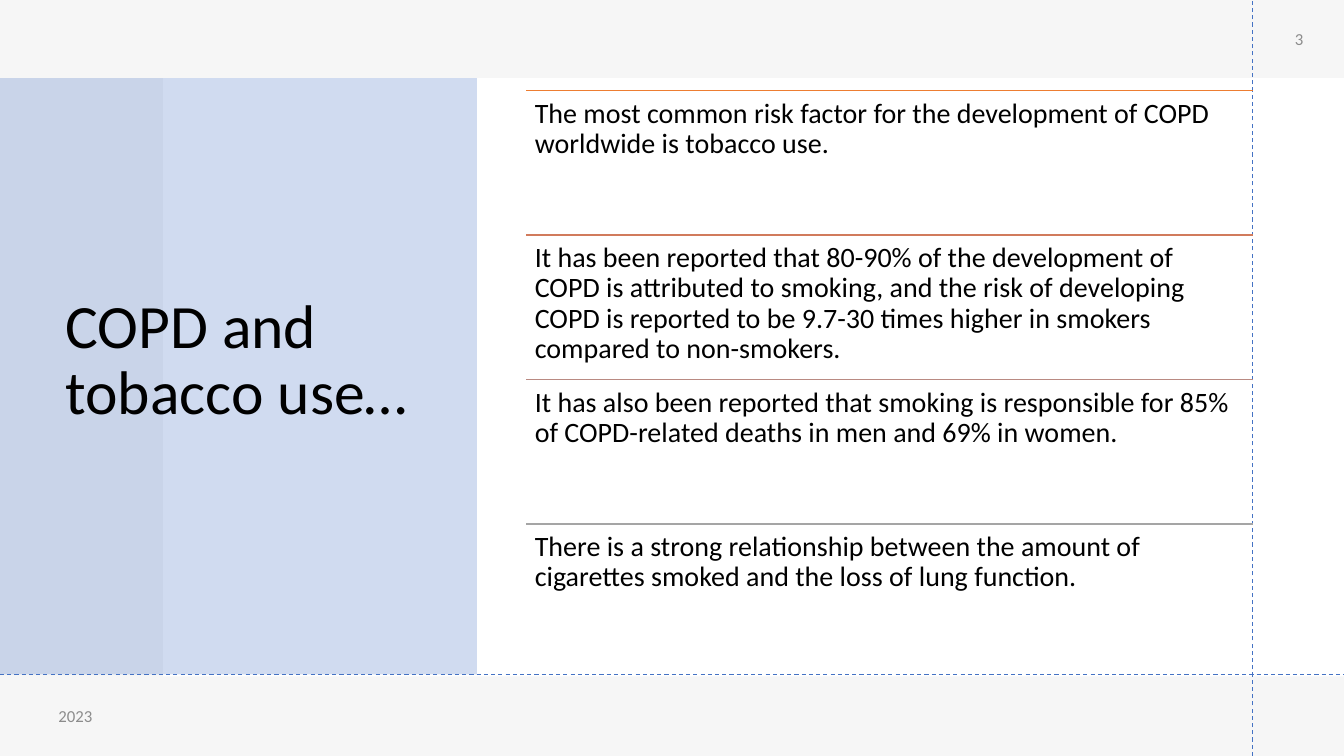
from dataclasses import dataclass

from lxml import etree
from pptx import Presentation
from pptx.dml.color import RGBColor
from pptx.enum.dml import MSO_LINE
from pptx.enum.shapes import MSO_CONNECTOR, MSO_SHAPE
from pptx.enum.text import MSO_ANCHOR, MSO_AUTO_SIZE, PP_ALIGN
from pptx.oxml.ns import qn
from pptx.util import Pt

RECTANGLE = MSO_SHAPE.RECTANGLE
STRAIGHT = MSO_CONNECTOR.STRAIGHT
DASH = MSO_LINE.DASH
LEFT, CENTER = PP_ALIGN.LEFT, PP_ALIGN.CENTER
TOP, MIDDLE = MSO_ANCHOR.TOP, MSO_ANCHOR.MIDDLE
NO_AUTOFIT = MSO_AUTO_SIZE.NONE
TITLE_ONLY = 5


@dataclass(frozen=True)
class Theme:
    font: str = "Calibri"
    white: str = "FFFFFF"
    grey: str = "E7E6E6"
    blue: str = "4472C4"
    text: str = "000000"
    muted: str = "8C8C8C"
    title_size: float = 44
    body_size: float = 20
    small_size: float = 12


THEME = Theme()

# Slide geometry in points
WIDTH, HEIGHT = 960, 540
GUIDE_X, GUIDE_Y = 895, 481.7
LIST_LEFT, LIST_TOP, ROW_HEIGHT = 376, 64.6, 103.2
LIST_WIDTH = GUIDE_X - LIST_LEFT

# Rule colour and wording of each row
FACTS = [
    ("ED7D31", "The most common risk factor for the development of COPD "
               "worldwide is tobacco use."),
    ("D17B5C", "It has been reported that 80-90% of the development of COPD "
               "is attributed to smoking, and the risk of developing COPD is "
               "reported to be 9.7-30 times higher in smokers compared to "
               "non-smokers."),
    ("B98A82", "It has also been reported that smoking is responsible for 85% "
               "of COPD-related deaths in men and 69% in women."),
    ("A5A5A5", "There is a strong relationship between the amount of "
               "cigarettes smoked and the loss of lung function."),
]


def write_text(shape, text, *, size, color=THEME.text, align=LEFT, anchor=TOP,
               spacing=1.0, after=0, margins=(7.2, 3.6)):
    """Put one formatted paragraph in a shape."""
    frame = shape.text_frame
    frame.word_wrap = True
    frame.auto_size = NO_AUTOFIT
    frame.vertical_anchor = anchor
    frame.margin_left = frame.margin_right = Pt(margins[0])
    frame.margin_top = frame.margin_bottom = Pt(margins[1])
    paragraph = frame.paragraphs[0]
    paragraph.alignment = align
    paragraph.line_spacing = spacing
    paragraph.space_after = Pt(after)
    run = paragraph.add_run()
    run.text = text
    run.font.name = THEME.font
    run.font.size = Pt(size)
    run.font.color.rgb = RGBColor.from_string(color)


def add_text(slide, box, text, **text_format):
    shape = slide.shapes.add_textbox(*map(Pt, box))
    write_text(shape, text, **text_format)


def add_panel(slide, box, color, opacity=100):
    """Add a borderless rectangle; opacity is a percentage."""
    shape = slide.shapes.add_shape(RECTANGLE, *map(Pt, box))
    shape.shadow.inherit = False
    shape.fill.solid()
    shape.fill.fore_color.rgb = RGBColor.from_string(color)
    shape.line.fill.background()
    if opacity < 100:
        color_element = shape.element.spPr.find(".//" + qn("a:srgbClr"))
        alpha = etree.SubElement(color_element, qn("a:alpha"))
        alpha.set("val", str(opacity * 1000))


def add_line(slide, start, end, color, width, dash=None):
    connector = slide.shapes.add_connector(STRAIGHT, *map(Pt, start + end))
    connector.line.color.rgb = RGBColor.from_string(color)
    connector.line.width = Pt(width)
    if dash is not None:
        connector.line.dash_style = dash
    etree.SubElement(connector.element.spPr, qn("a:effectLst"))


def add_title(slide, box, text):
    """Place the title placeholder above the panels drawn so far."""
    title = slide.shapes.title
    title.left, title.top, title.width, title.height = map(Pt, box)
    write_text(title, text, size=THEME.title_size, anchor=MIDDLE, spacing=0.9)
    title.element.getparent().append(title.element)


def add_fact(slide, top, color, text):
    """Add one row: a coloured rule with its text below."""
    add_line(slide, (LIST_LEFT, top), (GUIDE_X, top), color, 1)
    add_text(slide, (LIST_LEFT, top, LIST_WIDTH, ROW_HEIGHT), text,
             size=THEME.body_size, spacing=0.9, after=7, margins=(6, 6))


def main():
    presentation = Presentation()
    presentation.slide_width, presentation.slide_height = Pt(WIDTH), Pt(HEIGHT)
    slide = presentation.slides.add_slide(
        presentation.slide_layouts[TITLE_ONLY])

    # Background layers and title panel
    add_panel(slide, (0, 0, WIDTH, HEIGHT), THEME.white)
    add_panel(slide, (0, 0, WIDTH, HEIGHT), THEME.grey, opacity=35)
    add_panel(slide, (116.6, 55.8, WIDTH - 116.6, 427.4), THEME.white)
    add_panel(slide, (0, 55.8, 340.6, 426), THEME.blue, opacity=25)
    add_title(slide, (39.6, 53.3, 284.4, 409.7), "COPD and tobacco use…")

    # Dashed guides, page number and date
    add_line(slide, (GUIDE_X, HEIGHT), (GUIDE_X, 0), THEME.blue, 0.75, DASH)
    add_line(slide, (0, GUIDE_Y), (WIDTH, GUIDE_Y), THEME.blue, 0.75, DASH)
    small = {"size": THEME.small_size, "color": THEME.muted,
             "anchor": MIDDLE, "after": 6}
    add_text(slide, (896, 0, 64, 55.8), "3", align=CENTER, **small)
    add_text(slide, (34.6, 483.2, 216, 56.8), "2023", **small)

    # Rows of facts
    for index, (color, text) in enumerate(FACTS):
        add_fact(slide, LIST_TOP + index * ROW_HEIGHT, color, text)

    presentation.save("out.pptx")


if __name__ == "__main__":
    main()
